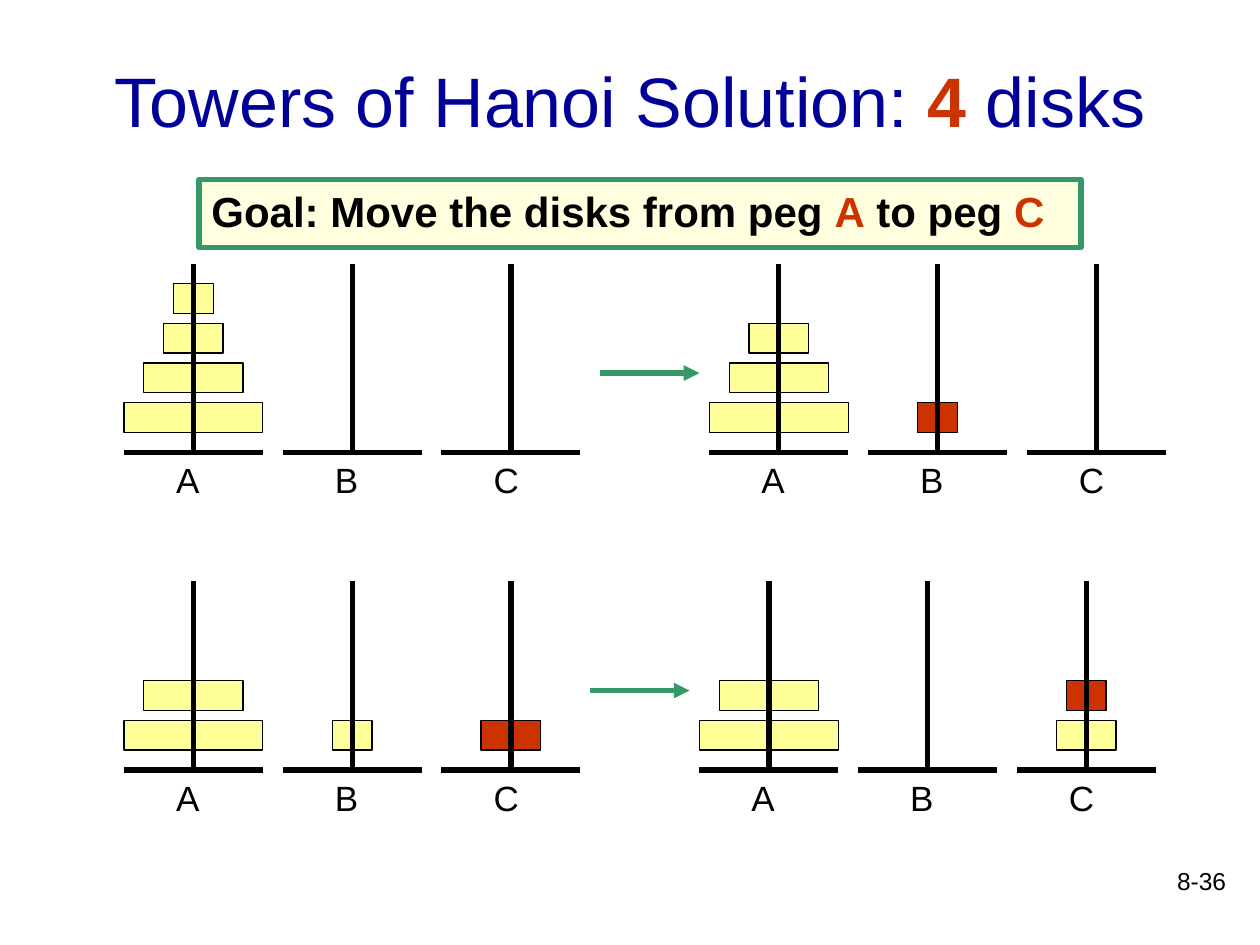
from dataclasses import dataclass

from lxml import etree
from pptx import Presentation
from pptx.dml.color import RGBColor
from pptx.enum.shapes import MSO_CONNECTOR, MSO_SHAPE
from pptx.enum.text import MSO_ANCHOR, PP_ALIGN
from pptx.oxml.ns import qn
from pptx.util import Inches, Pt


@dataclass(frozen=True)
class Theme:
    font: str = "Arial"
    ink: str = "000000"
    navy: str = "000099"
    red: str = "CC3300"
    green: str = "339966"
    disk: str = "FFFF99"
    cream: str = "FFFFDF"
    title: int = 40
    goal: int = 24
    label: int = 20
    page: int = 14
    thick: float = 3
    thin: float = 0.75


WIDE, HIGH = 10, 7.5
COLS = 127  # square grid cells across the slide
PEGS = "ABC"
PITCH = 16  # columns from peg to peg
POLE = 19
FOOT = 14
STEP = 4  # rows from disk to disk
SIZES = {1: 4, 2: 6, 3: 10, 4: 14}


def grid(count):
    return Inches(count * WIDE / COLS)


class Deck:
    def __init__(self, theme):
        self.theme = theme
        self.show = Presentation()
        self.show.slide_width = Inches(WIDE)
        self.show.slide_height = Inches(HIGH)
        self.slide = self.show.slides.add_slide(self.show.slide_layouts[5])

    def put(self, shape, runs, size, align=PP_ALIGN.LEFT, anchor=MSO_ANCHOR.TOP):
        """Fill a shape with runs given as (text, colour, bold)."""
        frame = shape.text_frame
        frame.word_wrap = True
        frame.vertical_anchor = anchor
        para = frame.paragraphs[0]
        para.alignment = align
        for text, color, bold in runs:
            run = para.add_run()
            run.text = text
            font = run.font
            font.name, font.size, font.bold = self.theme.font, Pt(size), bold
            font.color.rgb = RGBColor.from_string(color)

    def title(self, box, runs):
        shape = self.slide.shapes.title
        shape.left, shape.top, shape.width, shape.height = box
        self.put(shape, runs, self.theme.title, PP_ALIGN.CENTER, MSO_ANCHOR.MIDDLE)

    def text(self, box, words, size, align=PP_ALIGN.LEFT):
        shape = self.slide.shapes.add_textbox(*box)
        self.put(shape, [(words, self.theme.ink, False)], size, align)

    def rect(self, box, fill, line, width):
        shape = self.slide.shapes.add_shape(MSO_SHAPE.RECTANGLE, *box)
        shape.shadow.inherit = False
        shape.fill.solid()
        shape.fill.fore_color.rgb = RGBColor.from_string(fill)
        shape.line.color.rgb = RGBColor.from_string(line)
        shape.line.width = Pt(width)
        return shape

    def line(self, x1, y1, x2, y2, color, head=False):
        ends = map(grid, (x1, y1, x2, y2))
        link = self.slide.shapes.add_connector(MSO_CONNECTOR.STRAIGHT, *ends)
        link.line.color.rgb = RGBColor.from_string(color)
        link.line.width = Pt(self.theme.thick)
        props = link.element.spPr
        if head:
            etree.SubElement(props.find(qn("a:ln")), qn("a:tailEnd"), type="triangle")
        etree.SubElement(props, qn("a:effectLst"))

    def share(self, x, y, wide, high):
        """Turn shares of the slide's size into a box."""
        w, h = self.show.slide_width, self.show.slide_height
        return [round(n) for n in (x * w, y * h, wide * w, high * h)]

    def peg(self, x, base, name, disks, moved):
        """Draw one peg, with its disks listed from the bottom up."""
        look = self.theme
        for level, disk in enumerate(disks):
            wide = SIZES[disk]
            box = map(grid, (x - wide / 2, base - 5 - level * STEP, wide, 3))
            fill = look.red if disk == moved else look.disk
            self.rect(box, fill, look.ink, look.thin)
        self.line(x, base - POLE, x, base, look.ink)
        self.line(x - FOOT / 2, base, x + FOOT / 2, base, look.ink)
        self.text(map(grid, (x - 3, base, 6, 5.5)), name, look.label)

    def state(self, x, base, stacks, moved=None, arrow=False):
        """Draw the three pegs after one move, x being the first pole."""
        for i, (name, disks) in enumerate(zip(PEGS, stacks)):
            self.peg(x + i * PITCH, base, name, disks, moved)
        if arrow:
            y = base - 8
            self.line(x - 18, y, x - 8, y, self.theme.green, head=True)


def main():
    look = Theme()
    deck = Deck(look)
    deck.title(deck.share(0.075, 0.02, 0.85, 0.17), [
        ("Towers of Hanoi Solution: ", look.navy, False),
        ("4", look.red, True),
        (" disks", look.navy, False),
    ])

    upper, lower = 45.6, 77.6
    deck.state(19.5, upper, [(4, 3, 2, 1), (), ()])
    deck.state(78.5, upper, [(4, 3, 2), (1,), ()], moved=1, arrow=True)
    deck.state(19.5, lower, [(4, 3), (1,), (2,)], moved=2)
    deck.state(77.5, lower, [(4, 3), (), (2, 1)], moved=1, arrow=True)

    goal = deck.rect(deck.share(0.158, 0.19, 0.7, 0.072),
                     look.cream, look.green, look.thick)
    deck.put(goal, [
        ("Goal: Move the disks from peg ", look.ink, True),
        ("A", look.red, True),
        (" to peg ", look.ink, True),
        ("C", look.red, True),
    ], look.goal)
    deck.text(deck.share(0.775, 0.91, 0.208, 0.067), "8-36", look.page, PP_ALIGN.RIGHT)
    deck.show.save("out.pptx")


if __name__ == "__main__":
    main()
